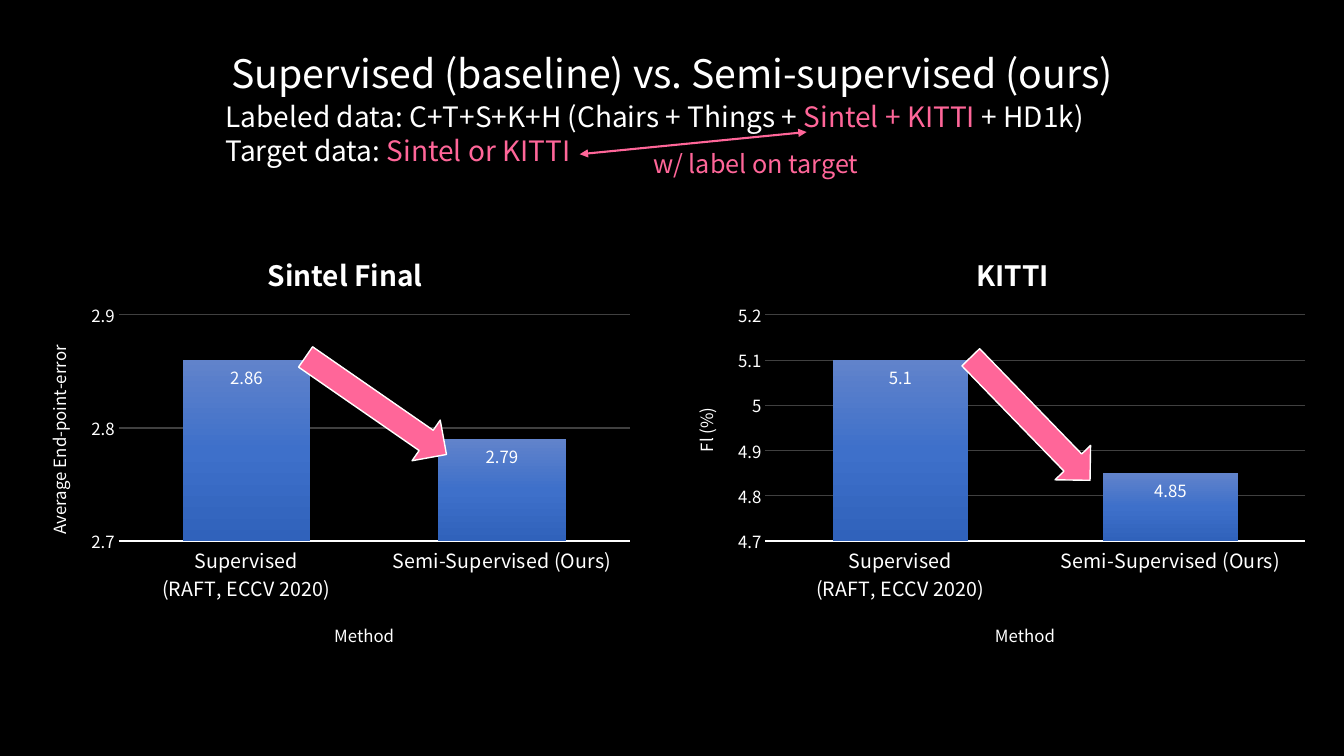
from copy import deepcopy

from lxml.etree import SubElement
from pptx import Presentation
from pptx.chart.data import CategoryChartData
from pptx.dml.color import RGBColor
from pptx.enum.chart import XL_CHART_TYPE, XL_LABEL_POSITION, XL_TICK_MARK
from pptx.enum.shapes import MSO_CONNECTOR, MSO_SHAPE
from pptx.enum.text import MSO_ANCHOR, PP_ALIGN
from pptx.oxml.ns import qn
from pptx.util import Inches, Pt

FONT = "Noto Sans CJK KR"
BLACK = RGBColor(0x00, 0x00, 0x00)
WHITE = RGBColor(0xFF, 0xFF, 0xFF)
PINK = RGBColor(0xFF, 0x66, 0x99)
GRID = RGBColor(0x40, 0x40, 0x40)
BAR_STOPS = [(0, RGBColor(0x61, 0x83, 0xCB)),
             (0.5, RGBColor(0x3E, 0x70, 0xCA)),
             (1, RGBColor(0x30, 0x62, 0xBB))]
CATEGORIES = ["Supervised\n(RAFT, ECCV 2020)", "Semi-Supervised (Ours)"]


def style_font(font, size, color=WHITE, bold=False):
    """Set the slide's typeface with a size, colour and weight."""
    font.name, font.size, font.bold = FONT, Pt(size), bold
    font.color.rgb = color


def add_text(s, box, paragraphs, size, bold=False, align=PP_ALIGN.LEFT):
    """Add a text box whose paragraphs are lists of (text, colour) runs."""
    tf = s.shapes.add_textbox(*map(Inches, box)).text_frame
    tf.word_wrap = True
    for i, runs in enumerate(paragraphs):
        p = tf.add_paragraph() if i else tf.paragraphs[0]
        p.alignment = align
        for text, color in runs:
            r = p.add_run()
            r.text = text
            style_font(r.font, size, color, bold)


def add_header(s, x, y):
    """Place the title, the data description and the note on labels."""
    title = s.shapes.title
    title.left, title.top = Inches(x), Inches(y)
    title.width, title.height = Inches(9.67), Inches(0.57)
    tf = title.text_frame
    tf.text = "Supervised (baseline) vs. Semi-supervised (ours)"
    tf.vertical_anchor = MSO_ANCHOR.MIDDLE
    p = tf.paragraphs[0]
    p.alignment = PP_ALIGN.CENTER
    style_font(p.runs[0].font, 28)

    add_text(s, (x + 0.31, y + 0.5, 10.24, 0.77), [
        [("Labeled data: C+T+S+K+H (Chairs + Things + ", WHITE),
         ("Sintel + KITTI", PINK), (" + HD1k)", WHITE)],
        [("Target data: ", WHITE), ("Sintel or KITTI", PINK)],
    ], 20)
    add_text(s, (x + 4.55, y + 0.98, 2.9, 0.4),
             [[("w/ label on target", PINK)]], 18)

    link = s.shapes.add_connector(
        MSO_CONNECTOR.STRAIGHT, Inches(x + 3.92), Inches(y + 1.09),
        Inches(x + 6.17), Inches(y + 0.87))
    link.line.color.rgb = PINK
    link.line.width = Pt(1.5)
    ln = link.line._get_or_add_ln()
    for end in ("a:headEnd", "a:tailEnd"):
        SubElement(ln, qn(end), type="triangle")
    SubElement(link._element.spPr, qn("a:effectLst"))


def set_layout(element, inner=False, **fractions):
    """Fix a chart part at fractions of the chart's size."""
    layout = element.find(qn("c:layout"))
    if layout is None:
        layout = SubElement(element, qn("c:layout"))
        element.insert(0, layout)
    manual = SubElement(layout, qn("c:manualLayout"))
    if inner:
        SubElement(manual, qn("c:layoutTarget"), val="inner")
    for mode in ("xMode", "yMode"):
        SubElement(manual, qn(f"c:{mode}"), val="edge")
    for name, value in fractions.items():
        SubElement(manual, qn(f"c:{name}"), val=str(value))


def style_axis(axis, title, size, x, y):
    """Format an axis and place its title."""
    axis.major_tick_mark = axis.minor_tick_mark = XL_TICK_MARK.NONE
    style_font(axis.tick_labels.font, size)
    tf = axis.axis_title.text_frame
    tf.text = title
    style_font(tf.paragraphs[0].runs[0].font, 12)
    set_layout(axis.axis_title._element, x=x, y=y)


def fill_bars(series):
    """Give the bars a vertical three-stop gradient."""
    fill = series.format.fill
    fill.gradient()
    fill.gradient_angle = 270
    first = series._element.xpath(".//a:gs")[0]
    first.addnext(deepcopy(first))
    for stop, (position, color) in zip(fill.gradient_stops, BAR_STOPS):
        stop.position = position
        stop.color.rgb = color


def add_result(s, box, heading, heading_x, values, limits, measure, measure_y, plot):
    """Place a heading and its column chart in the given box."""
    x, y, w, h = box
    data = CategoryChartData()
    data.categories = CATEGORIES
    data.add_series("Series 1", values)
    chart = s.shapes.add_chart(XL_CHART_TYPE.COLUMN_CLUSTERED,
                               *map(Inches, box), data).chart
    chart.has_legend = chart.has_title = False
    style_font(chart.font, 10)
    set_layout(chart._chartSpace.chart.plotArea, True, **plot)

    style_axis(chart.category_axis, "Method", 14, 0.495, 0.88)
    chart.category_axis.format.line.color.rgb = WHITE
    chart.category_axis.format.line.width = Pt(1)
    axis = chart.value_axis
    style_axis(axis, measure, 12, 0.024, measure_y)
    axis.minimum_scale, axis.maximum_scale = limits
    axis.major_unit = 0.1
    axis.format.line.fill.background()
    axis.major_gridlines.format.line.color.rgb = GRID
    axis.major_gridlines.format.line.width = Pt(0.75)

    bars = chart.plots[0]
    bars.gap_width, bars.overlap = 100, -24
    bars.vary_by_categories = False
    fill_bars(bars.series[0])
    bars.has_data_labels = True
    labels = bars.data_labels
    labels.show_value = True
    labels.position = XL_LABEL_POSITION.INSIDE_END
    style_font(labels.font, 12)

    add_text(s, (heading_x, y - 0.4, 3.33, 0.44), [[(heading, WHITE)]],
             20, True, PP_ALIGN.CENTER)


def add_drop_arrow(s, x, y, angle):
    """Add a block arrow pointing down from the first bar to the second."""
    sp = s.shapes.add_shape(MSO_SHAPE.RIGHT_ARROW, Inches(x), Inches(y),
                            Inches(1.7), Inches(0.49))
    sp.rotation = angle
    sp.shadow.inherit = False
    sp.fill.solid()
    sp.fill.fore_color.rgb = PINK
    sp.line.color.rgb = WHITE
    sp.line.width = Pt(1)


def main():
    """Build the slide and save it."""
    prs = Presentation()
    prs.slide_width, prs.slide_height = Inches(13.33), Inches(7.5)
    s = prs.slides.add_slide(prs.slide_layouts[5])
    s.background.fill.solid()
    s.background.fill.fore_color.rgb = BLACK
    add_header(s, 1.83, 0.44)
    add_result(s, (0.26, 2.92, 6.11, 3.64), "Sintel Final", 1.76, (2.86, 2.79),
               (2.7, 2.9), "Average End-point-error", 0.13,
               dict(x=0.15, y=0.056, w=0.83, h=0.617))
    add_result(s, (6.67, 2.92, 6.4, 3.64), "KITTI", 8.38, (5.1, 4.85),
               (4.7, 5.2), "Fl (%)", 0.3,
               dict(x=0.144, y=0.056, w=0.837, h=0.617))
    add_drop_arrow(s, 2.88, 3.78, 34.7)
    add_drop_arrow(s, 9.37, 3.91, 45.9)
    prs.save("out.pptx")


if __name__ == "__main__":
    main()
